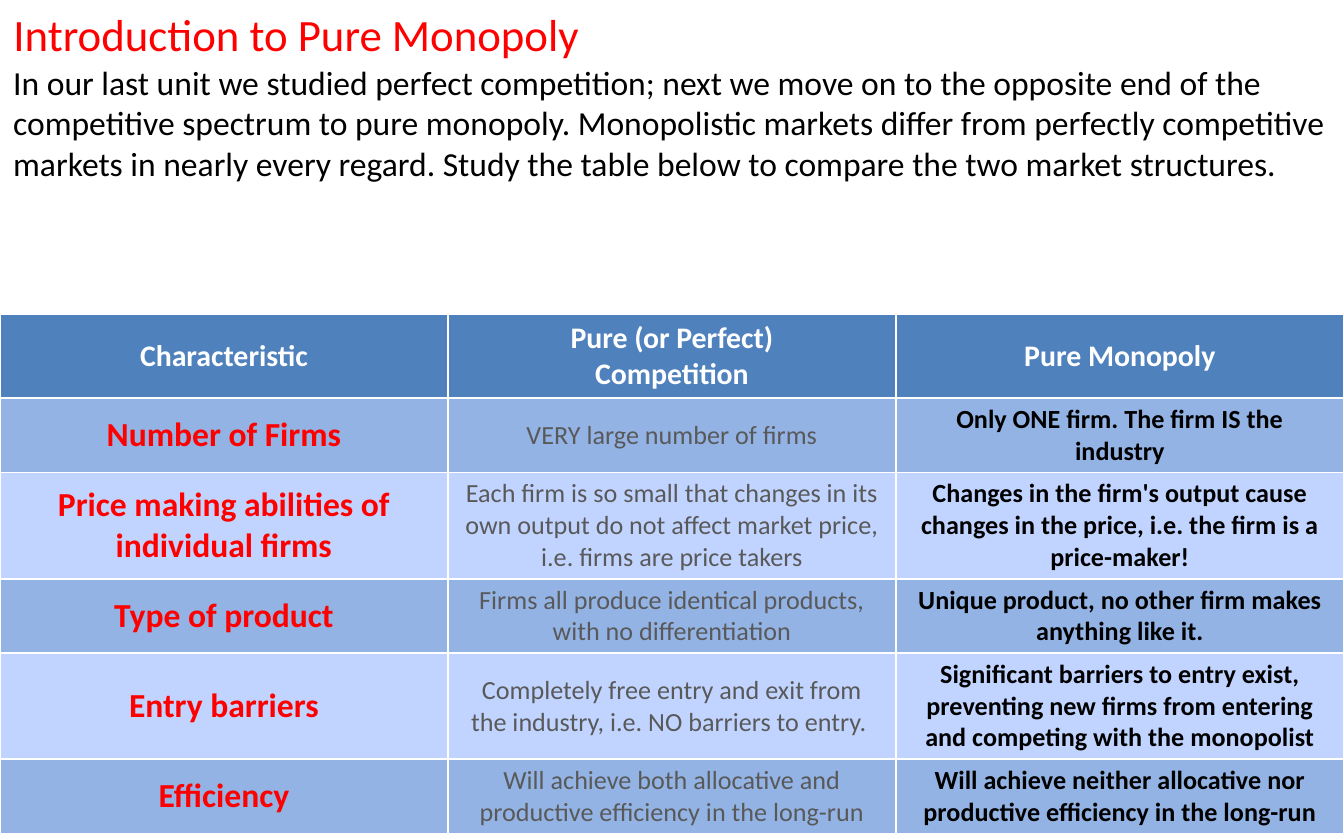
from pptx import Presentation
from pptx.dml.color import RGBColor
from pptx.enum.text import MSO_ANCHOR, PP_ALIGN
from pptx.util import Inches, Pt

LEFT, CENTER = PP_ALIGN.LEFT, PP_ALIGN.CENTER
TOP, MIDDLE = MSO_ANCHOR.TOP, MSO_ANCHOR.MIDDLE
FONT = "Calibri"
TITLE_ONLY = 5
COLORS = {
    "red": "FF0000",
    "black": "000000",
    "gray": "595959",
    "white": "FFFFFF",
    "header": "4F81BD",
    "dark_band": "93B3E5",
    "light_band": "C0D4FF",
}
TITLE = "Introduction to Pure Monopoly"
INTRO = (
    "In our last unit we studied perfect competition; next we move on to the "
    "opposite end of the competitive spectrum to pure monopoly. Monopolistic "
    "markets differ from perfectly competitive markets in nearly every regard. "
    "Study the table below to compare the two market structures."
)
HEADERS = ("Characteristic", "Pure (or Perfect)\nCompetition", "Pure Monopoly")
COMPARISON = (
    ("Number of Firms",
     "VERY large number of firms",
     "Only ONE firm. The firm IS the industry"),
    ("Price making abilities of individual firms",
     "Each firm is so small that changes in its own output do not affect "
     "market price, i.e. firms are price takers",
     "Changes in the firm's output cause changes in the price, i.e. the firm "
     "is a price-maker!"),
    ("Type of product",
     "Firms all produce identical products, with no differentiation",
     "Unique product, no other firm makes anything like it."),
    ("Entry barriers",
     "Completely free entry and exit from the industry, i.e. NO barriers to entry. ",
     "Significant barriers to entry exist, preventing new firms from entering "
     "and competing with the monopolist"),
    ("Efficiency",
     "Will achieve both allocative and productive efficiency in the long-run",
     "Will achieve neither allocative nor productive efficiency in the long-run"),
)
ROW_HEIGHTS = (0.62, 0.55, 0.79, 0.55, 0.79, 0.55)
HEADER_FORMAT = {"size": 16, "color": "white", "bold": True}
COLUMN_FORMATS = (
    {"size": 18, "color": "red", "bold": True},
    {"size": 14, "color": "gray"},
    {"size": 14, "color": "black", "bold": True},
)


def write_text(tf, text, size=18, color="black", bold=False, align=LEFT):
    """Fill a text frame with one formatted paragraph for each line."""
    for i, line in enumerate(text.split("\n")):
        p = tf.paragraphs[0] if i == 0 else tf.add_paragraph()
        p.alignment = align
        r = p.add_run()
        r.text = line
        r.font.name = FONT
        r.font.size = Pt(size)
        r.font.bold = bold
        r.font.color.rgb = RGBColor.from_string(COLORS[color])


def place_text(sp, left, top, width, height, text, margins, **fmt):
    """Place a text shape in its box and write its text."""
    sp.left, sp.top = Inches(left), Inches(top)
    sp.width, sp.height = Inches(width), Inches(height)
    tf = sp.text_frame
    tf.word_wrap = True
    tf.vertical_anchor = TOP
    tf.margin_left = tf.margin_right = Inches(0.1)
    tf.margin_top, tf.margin_bottom = (Inches(m) for m in margins)
    write_text(tf, text, **fmt)


def add_introduction(s, left, top, width, height):
    """Add the title and the introduction beneath it."""
    title_height = 0.46
    place_text(s.shapes.title, left, top, width, title_height, TITLE,
               (0.05, 0), size=24, color="red")
    sp = s.shapes.add_textbox(0, 0, 0, 0)
    place_text(sp, left, top + title_height, width, height - title_height,
               INTRO, (0, 0.05))


def fill_cell(cell, text, fill, **fmt):
    """Set the fill, margins and centred text of a table cell."""
    cell.fill.solid()
    cell.fill.fore_color.rgb = RGBColor.from_string(COLORS[fill])
    cell.vertical_anchor = MIDDLE
    cell.margin_left = cell.margin_right = Inches(0.1)
    cell.margin_top = cell.margin_bottom = Inches(0.04)
    write_text(cell.text_frame, text, align=CENTER, **fmt)


def add_comparison(s, left, top, width, height):
    """Add the table that compares the two market structures."""
    rows = (HEADERS, *COMPARISON)
    table = s.shapes.add_table(len(rows), len(HEADERS), Inches(left), Inches(top),
                               Inches(width), Inches(height)).table
    for i, row in enumerate(rows):
        table.rows[i].height = Inches(ROW_HEIGHTS[i])
        band = "dark_band" if i % 2 else "light_band"
        for j, text in enumerate(row):
            fill, fmt = (band, COLUMN_FORMATS[j]) if i else ("header", HEADER_FORMAT)
            fill_cell(table.cell(i, j), text, fill, **fmt)


def main():
    """Build and save the slide."""
    prs = Presentation()
    prs.slide_width, prs.slide_height = Inches(10), Inches(6.25)
    s = prs.slides.add_slide(prs.slide_layouts[TITLE_ONLY])
    add_comparison(s, 0, 2.34, 10, sum(ROW_HEIGHTS))
    add_introduction(s, 0, 0, 10, 1.41)
    prs.save("out.pptx")


if __name__ == "__main__":
    main()
